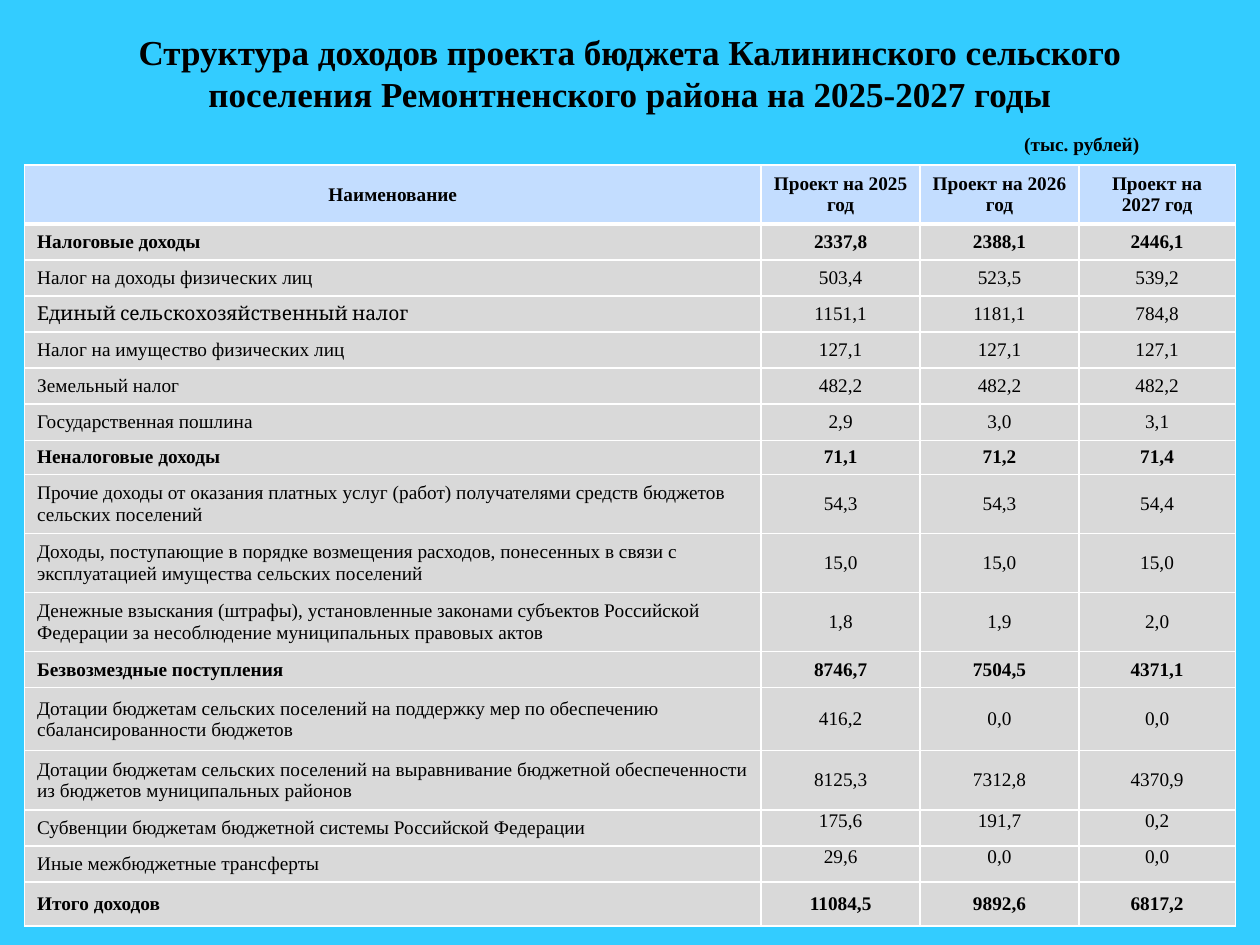
from lxml import etree
from pptx import Presentation
from pptx import util as u
from pptx.dml import color
from pptx.enum import text
from pptx.oxml import ns

COLOURS = {
    "background": "33CCFF",
    "header": "C3DDFF",
    "body": "D9D9D9",
    "line": "FFFFFF",
    "text": "000000",
}
CENTRE, LEFT = text.PP_ALIGN.CENTER, text.PP_ALIGN.LEFT
MIDDLE, TOP = text.MSO_ANCHOR.MIDDLE, text.MSO_ANCHOR.TOP

COLUMN_WIDTHS = [421, 90.8, 90.8, 89.3]
HEADINGS = ["Наименование"] + [f"Проект на {year} год" for year in (2025, 2026, 2027)]
SINGLE, DOUBLE = 20.6, 33.8

INCOME = [
    ("section", 20.6, "Налоговые доходы", "2337,8", "2388,1", "2446,1"),
    ("item", SINGLE, "Налог на доходы физических лиц", "503,4", "523,5", "539,2"),
    ("cambria", SINGLE, "Единый сельскохозяйственный налог", "1151,1", "1181,1", "784,8"),
    ("item", SINGLE, "Налог на имущество физических лиц", "127,1", "127,1", "127,1"),
    ("item", SINGLE, "Земельный налог", "482,2", "482,2", "482,2"),
    ("item", SINGLE, "Государственная пошлина", "2,9", "3,0", "3,1"),
    ("section", 12.4, "Неналоговые доходы", "71,1", "71,2", "71,4"),
    ("item", DOUBLE, "Прочие доходы от оказания платных услуг (работ) получателями "
     "средств бюджетов сельских поселений", "54,3", "54,3", "54,4"),
    ("item", DOUBLE, "Доходы, поступающие в порядке возмещения расходов, понесенных "
     "в связи с эксплуатацией имущества сельских поселений", "15,0", "15,0", "15,0"),
    ("item", DOUBLE, "Денежные взыскания (штрафы), установленные законами субъектов "
     "Российской Федерации за несоблюдение муниципальных правовых актов",
     "1,8", "1,9", "2,0"),
    ("section", SINGLE, "Безвозмездные поступления", "8746,7", "7504,5", "4371,1"),
    ("item", 36, "Дотации бюджетам сельских поселений на поддержку мер по "
     "обеспечению сбалансированности бюджетов", "416,2", "0,0", "0,0"),
    ("item", DOUBLE, "Дотации бюджетам сельских поселений на выравнивание бюджетной "
     "обеспеченности из бюджетов муниципальных районов", "8125,3", "7312,8", "4370,9"),
    ("top", SINGLE, "Субвенции бюджетам бюджетной системы Российской Федерации",
     "175,6", "191,7", "0,2"),
    ("top", SINGLE, "Иные межбюджетные трансферты", "29,6", "0,0", "0,0"),
    ("total", 25.2, "Итого доходов", "11084,5", "9892,6", "6817,2"),
]


def write(paragraph, words, *, size=11, bold=False, font="Times New Roman", align=CENTRE):
    paragraph.alignment = align
    run = paragraph.add_run()
    run.text = words
    run.font.size = u.Pt(size)
    run.font.bold = bold
    run.font.name = font
    run.font.color.rgb = color.RGBColor.from_string(COLOURS["text"])


class IncomeSlide:
    def __init__(self, deck):
        self.slide = deck.slides.add_slide(deck.slide_layouts[5])
        backdrop = self.slide.background.fill
        backdrop.solid()
        backdrop.fore_color.rgb = color.RGBColor.from_string(COLOURS["background"])

    def title(self, heading, unit):
        title = self.slide.shapes.title
        title.left, title.top = u.Pt(36), u.Pt(21.6)
        title.width, title.height = u.Pt(648), u.Pt(67)
        frame = title.text_frame
        frame.word_wrap = True
        frame.auto_size = text.MSO_AUTO_SIZE.NONE
        frame.vertical_anchor = MIDDLE
        frame.margin_bottom = u.Pt(7.6)
        write(frame.paragraphs[0], heading, size=20, bold=True)
        unit_line = frame.add_paragraph()
        unit_line.space_before = u.Pt(10)
        write(unit_line, unit, bold=True, align=LEFT)
        properties = unit_line._p.get_or_add_pPr()
        properties.set("marL", str(u.Pt(542)))
        properties.set("indent", "0")

    def border(self, cell, top=1, bottom=1):
        properties = cell._tc.get_or_add_tcPr()
        sides = {"lnL": 1, "lnR": 1, "lnT": top, "lnB": bottom}
        for position, (side, width) in enumerate(sides.items()):
            line = etree.Element(ns.qn(f"a:{side}"), w=str(u.Pt(width)))
            fill = etree.SubElement(line, ns.qn("a:solidFill"))
            etree.SubElement(fill, ns.qn("a:srgbClr"), val=COLOURS["line"])
            properties.insert(position, line)

    def cell(self, cell, words, fill, *, anchor=MIDDLE, tight=False, top=1, bottom=1, **style):
        cell.fill.solid()
        cell.fill.fore_color.rgb = color.RGBColor.from_string(COLOURS[fill])
        cell.vertical_anchor = anchor
        if tight:
            cell.margin_left = cell.margin_right = u.Pt(5)
            cell.margin_top = cell.margin_bottom = u.Pt(0)
        write(cell.text_frame.paragraphs[0], words, **style)
        self.border(cell, top, bottom)

    def table(self, headings, rows):
        heights = [DOUBLE] + [row[1] for row in rows]
        table = self.slide.shapes.add_table(
            len(heights), len(headings), u.Pt(14), u.Pt(94.3),
            u.Pt(sum(COLUMN_WIDTHS)), u.Pt(sum(heights))).table
        for column, width in zip(table.columns, COLUMN_WIDTHS):
            column.width = u.Pt(width)
        for row, height in zip(table.rows, heights):
            row.height = u.Pt(height)
        for column, heading in enumerate(headings):
            self.cell(table.cell(0, column), heading, "header", bold=True, bottom=3)
        for index, (kind, _, name, *amounts) in enumerate(rows, 1):
            bold = kind in ("section", "total")
            top = 3 if index == 1 else 1
            font = "Cambria" if kind == "cambria" else "Times New Roman"
            self.cell(table.cell(index, 0), name, "body", bold=bold, font=font,
                      align=LEFT, top=top)
            for column, amount in enumerate(amounts, 1):
                self.cell(table.cell(index, column), amount, "body", bold=bold, top=top,
                          anchor=TOP if kind == "top" else MIDDLE,
                          tight=kind != "section")


def main():
    deck = Presentation()
    deck.slide_width, deck.slide_height = u.Pt(720), u.Pt(540)
    income = IncomeSlide(deck)
    income.title("Структура доходов проекта бюджета Калининского сельского "
                 "поселения Ремонтненского района на 2025-2027 годы", "(тыс. рублей)")
    income.table(HEADINGS, INCOME)
    deck.save("out.pptx")


if __name__ == "__main__":
    main()
